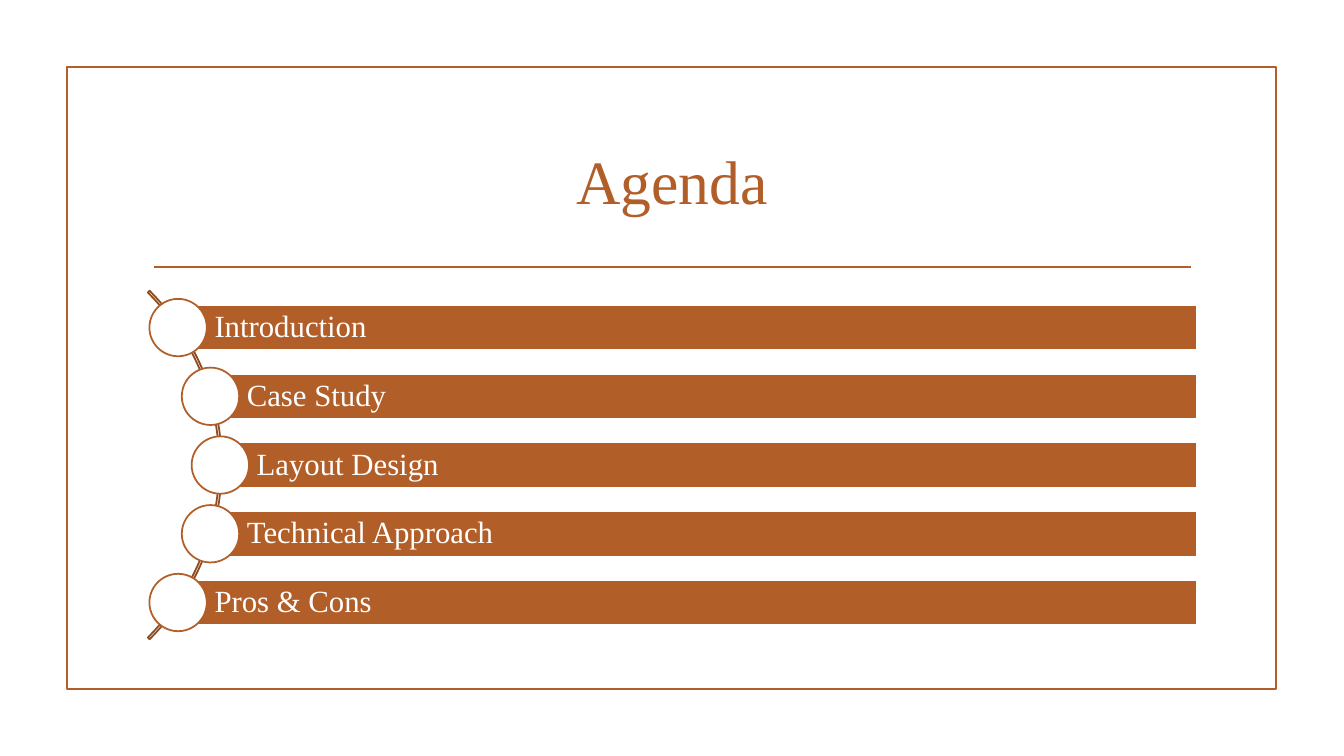
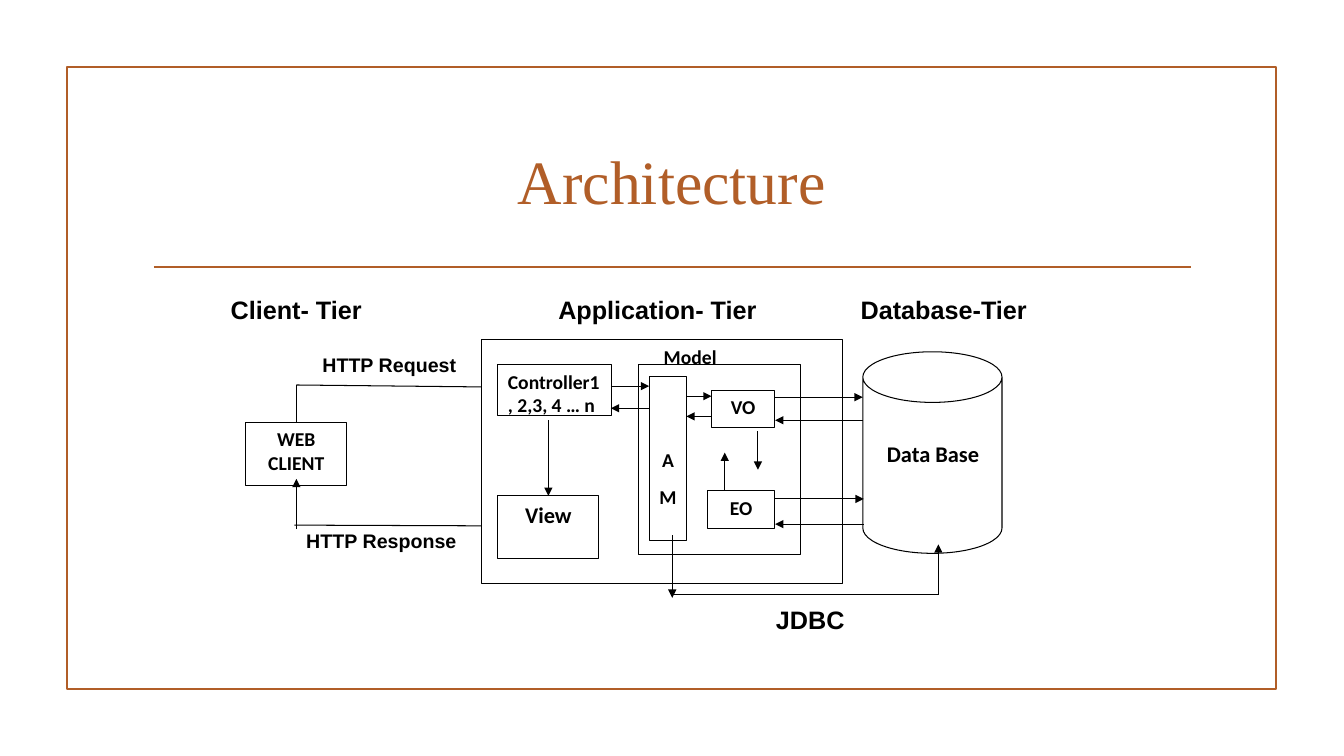
from dataclasses import dataclass
from math import sqrt

from lxml import etree
from pptx import Presentation
from pptx import util as u
from pptx.dml import color
from pptx.enum import shapes, text
from pptx.oxml import ns

COLORS = {"rust": "B15E28", "brown": "8E4B20", "white": "FFFFFF", "black": "000000"}
SERIF, SANS, BODY = "Times New Roman", "Arial", "Calibri"
SHAPE = shapes.MSO_SHAPE
LEFT, CENTER = text.PP_ALIGN.LEFT, text.PP_ALIGN.CENTER
TOP, MIDDLE = text.MSO_ANCHOR.TOP, text.MSO_ANCHOR.MIDDLE

AGENDA = ["Introduction", "Case Study", "Layout Design", "Technical Approach", "Pros & Cons"]


@dataclass(frozen=True)
class Box:
    name: str
    left: float
    top: float
    width: float
    height: float
    caption: str = ""
    size: float = 14
    align: text.PP_ALIGN = CENTER
    inset_left: float = 7.2
    inset_top: float = 3.6
    kind: SHAPE = SHAPE.RECTANGLE


@dataclass(frozen=True)
class Link:
    start: tuple[float, float]
    end: tuple[float, float]
    arrow: bool = True
    target: str = ""


@dataclass(frozen=True)
class Exchange:
    left: float
    right: float
    request_y: float
    reply_y: float


@dataclass(frozen=True)
class Label:
    left: float
    top: float
    width: float
    caption: str
    size: float = 18


BOXES = [
    Box("client", 175.7, 301.7, 72, 45, "WEB CLIENT"),
    Box("application", 344.2, 242.6, 257.8, 174.2, "Model", inset_left=46.8),
    Box("model", 455.8, 260.6, 115.9, 135.4),
    Box("controller", 355.7, 260.6, 81, 36, "Controller1, 2,3, 4 … n", align=LEFT),
    Box("view", 355.7, 354.2, 72, 45, "View", size=16),
    Box("module", 463.7, 269.3, 27, 117, "A\nM", inset_top=50.4),
    Box("view object", 508.3, 278.6, 45, 27, "VO"),
    Box("entity object", 505.4, 350.6, 48.2, 27, "EO"),
    Box("database", 616.3, 251.3, 99.4, 144, "Data Base", size=16, align=LEFT,
        inset_left=17.2, inset_top=27, kind=SHAPE.CAN),
]

LINKS = [
    Link((211.7, 275), (211.7, 301.7), arrow=False, target="client"),
    Link((211.7, 378), (211.7, 342)),
    Link((211.7, 275), (344.2, 276.4), arrow=False),
    Link((344.2, 375.6), (210.2, 375.1), arrow=False),
    Link((391.7, 300.2), (391.7, 354.2), target="view"),
    Link((517.7, 350.6), (517.7, 323.3)),
    Link((541.4, 308.2), (541.4, 335.5)),
    Link((670.3, 424.8), (670.3, 388.8)),
    Link((480.2, 382.3), (480.2, 427)),
    Link((481.7, 424.8), (670.3, 424.8), arrow=False),
]

EXCHANGES = [
    Exchange(553.7, 616.3, 283.7, 300.2),
    Exchange(553.7, 617, 356.4, 374.4),
    Exchange(490.3, 508.3, 283, 297.4),
    Exchange(436.3, 463.7, 275.8, 291.6),
]

LABELS = [
    Label(547.2, 428.4, 69, "JDBC"),
    Label(607.7, 206.6, 139.7, "Database-Tier"),
    Label(391.7, 206.6, 157.7, "Application- Tier"),
    Label(157.7, 206.6, 109.4, "Client- Tier"),
    Label(223.2, 248.4, 110.9, "HTTP Request", 14),
    Label(211.7, 374.4, 122.4, "HTTP Response", 14),
]


def rgb(name: str) -> color.RGBColor:
    return color.RGBColor.from_string(COLORS[name])


def write_text(shape, content: str, *, size: float, font: str, ink: str = "black",
               bold: bool = False, align: text.PP_ALIGN = LEFT,
               anchor: text.MSO_ANCHOR = TOP, wrap: bool = True,
               inset_left: float = 7.2, inset_top: float = 3.6,
               spacing: float = 1.0, after: float = 0) -> None:
    frame = shape.text_frame
    frame.word_wrap = wrap
    frame.vertical_anchor = anchor
    frame.margin_left = u.Pt(inset_left)
    frame.margin_top = u.Pt(inset_top)
    frame.text = content
    for paragraph in frame.paragraphs:
        paragraph.alignment = align
        paragraph.line_spacing = spacing
        paragraph.space_after = u.Pt(after)
        paragraph.font.size = u.Pt(size)
        paragraph.font.name = font
        paragraph.font.bold = bold
        paragraph.font.color.rgb = rgb(ink)


def add_shape(slide, kind: SHAPE, left: float, top: float, width: float, height: float,
              fill: str | None, line: str, weight: float = 1.25):
    shape = slide.shapes.add_shape(kind, u.Pt(left), u.Pt(top), u.Pt(width), u.Pt(height))
    shape.shadow.inherit = False
    if fill:
        shape.fill.solid()
        shape.fill.fore_color.rgb = rgb(fill)
    else:
        shape.fill.background()
    shape.line.color.rgb = rgb(line)
    shape.line.width = u.Pt(weight)
    return shape


def add_textbox(slide, left: float, top: float, width: float, height: float):
    return slide.shapes.add_textbox(u.Pt(left), u.Pt(top), u.Pt(width), u.Pt(height))


def add_line(slide, start: tuple[float, float], end: tuple[float, float],
             ink: str = "black", weight: float = 0.75, arrow: bool = False):
    connector = slide.shapes.add_connector(
        shapes.MSO_CONNECTOR.STRAIGHT, *(u.Pt(value) for value in (*start, *end)))
    connector.line.color.rgb = rgb(ink)
    connector.line.width = u.Pt(weight)
    properties = connector._element.spPr
    if arrow:
        outline = properties.find(ns.qn("a:ln"))
        etree.SubElement(outline, ns.qn("a:tailEnd"), type="triangle")
    etree.SubElement(properties, ns.qn("a:effectLst"))
    return connector


def add_titled_slide(presentation, title: str):
    slide = presentation.slides.add_slide(presentation.slide_layouts[6])
    add_shape(slide, SHAPE.RECTANGLE, 47.7, 48, 864, 444, None, "rust")
    add_line(slide, (110, 190.8), (850.5, 190.8), "rust", 1.25)
    write_text(add_textbox(slide, 102, 77, 756, 103), title, size=44, font=SERIF,
               ink="rust", align=CENTER, anchor=MIDDLE)
    return slide


def build_agenda(presentation) -> None:
    slide = add_titled_slide(presentation, "Agenda")
    arc_x, arc_y, arc_size, orbit = -17.6, 332.2, 352, 175
    pitch, bar_height, bar_right, dot = 49.1, 32.4, 854.6, 41
    arc = add_shape(slide, SHAPE.BLOCK_ARC, arc_x - arc_size / 2, arc_y - arc_size / 2,
                    arc_size, arc_size, None, "brown")
    for index, value in enumerate((189, 27, 0.005)):
        arc.adjustments[index] = value
    for index, topic in enumerate(AGENDA):
        offset = (index - (len(AGENDA) - 1) / 2) * pitch
        x, y = arc_x + sqrt(orbit**2 - offset**2), arc_y + offset
        bar = add_shape(slide, SHAPE.RECTANGLE, x, y - bar_height / 2,
                        bar_right - x, bar_height, "rust", "white")
        write_text(bar, topic, size=22, font=SERIF, ink="white", anchor=MIDDLE,
                   inset_left=26, spacing=0.9)
        add_shape(slide, SHAPE.OVAL, x - dot / 2, y - dot / 2, dot, dot, "white", "rust")


def build_architecture(presentation) -> None:
    slide = add_titled_slide(presentation, "Architecture")
    placed = {}
    for box in BOXES:
        shape = add_shape(slide, box.kind, box.left, box.top, box.width, box.height,
                          "white", "black", 0.75)
        if box.kind == SHAPE.CAN:
            shape.adjustments[0] = 0.364
        if box.caption:
            write_text(shape, box.caption, size=box.size, font=BODY, bold=True,
                       align=box.align, inset_left=box.inset_left,
                       inset_top=box.inset_top, after=10)
        placed[box.name] = shape
    for link in LINKS:
        connector = add_line(slide, link.start, link.end, arrow=link.arrow)
        if link.target:
            connector.end_connect(placed[link.target], 0)
    for pair in EXCHANGES:
        add_line(slide, (pair.left, pair.request_y), (pair.right, pair.request_y), arrow=True)
        add_line(slide, (pair.right, pair.reply_y), (pair.left, pair.reply_y), arrow=True)
    for label in LABELS:
        write_text(add_textbox(slide, label.left, label.top, label.width, label.size * 1.6),
                   label.caption, size=label.size, font=SANS, bold=True, wrap=False)


def main() -> None:
    presentation = Presentation()
    presentation.slide_width, presentation.slide_height = u.Pt(960), u.Pt(540)
    build_agenda(presentation)
    build_architecture(presentation)
    presentation.save("out.pptx")


if __name__ == "__main__":
    main()
